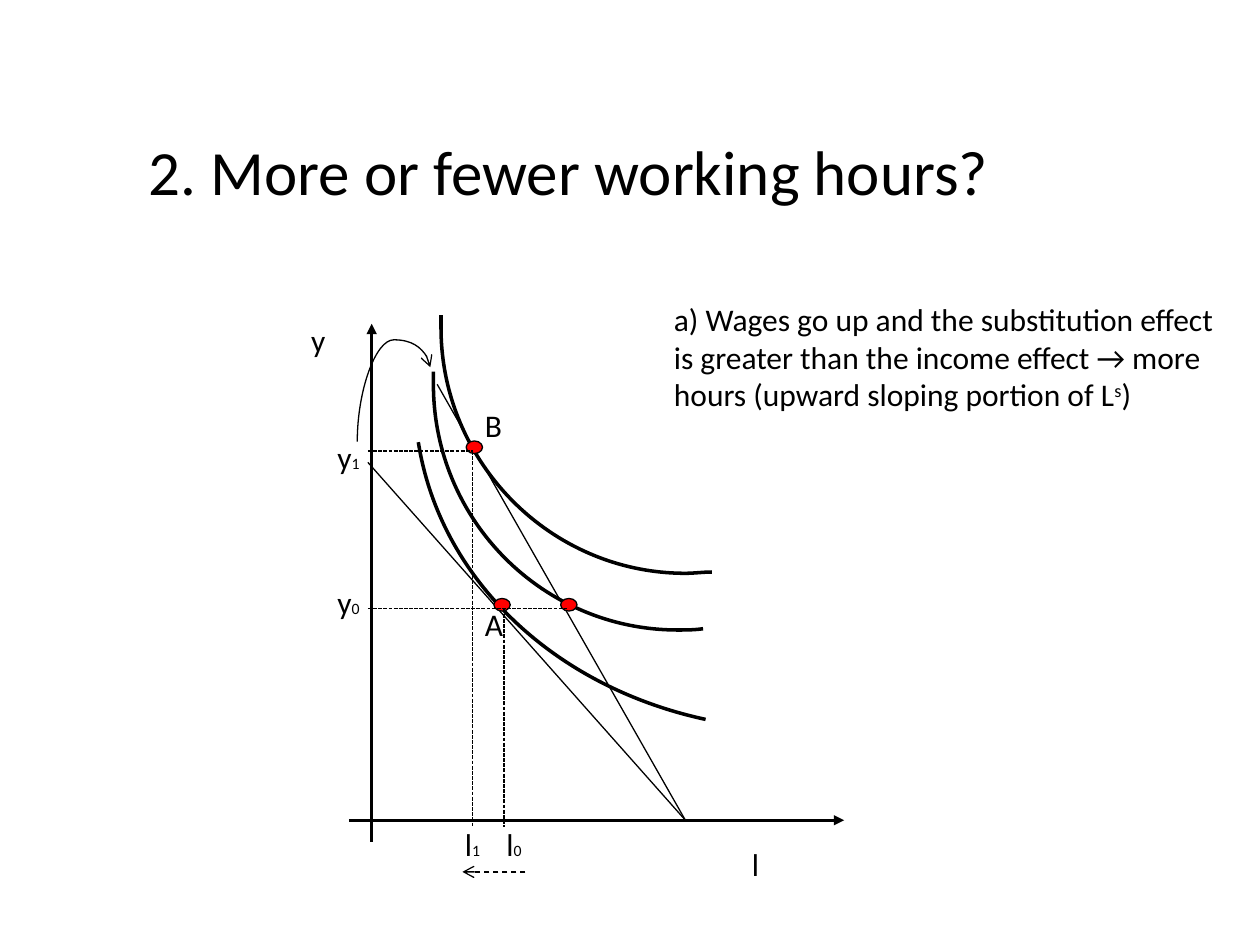
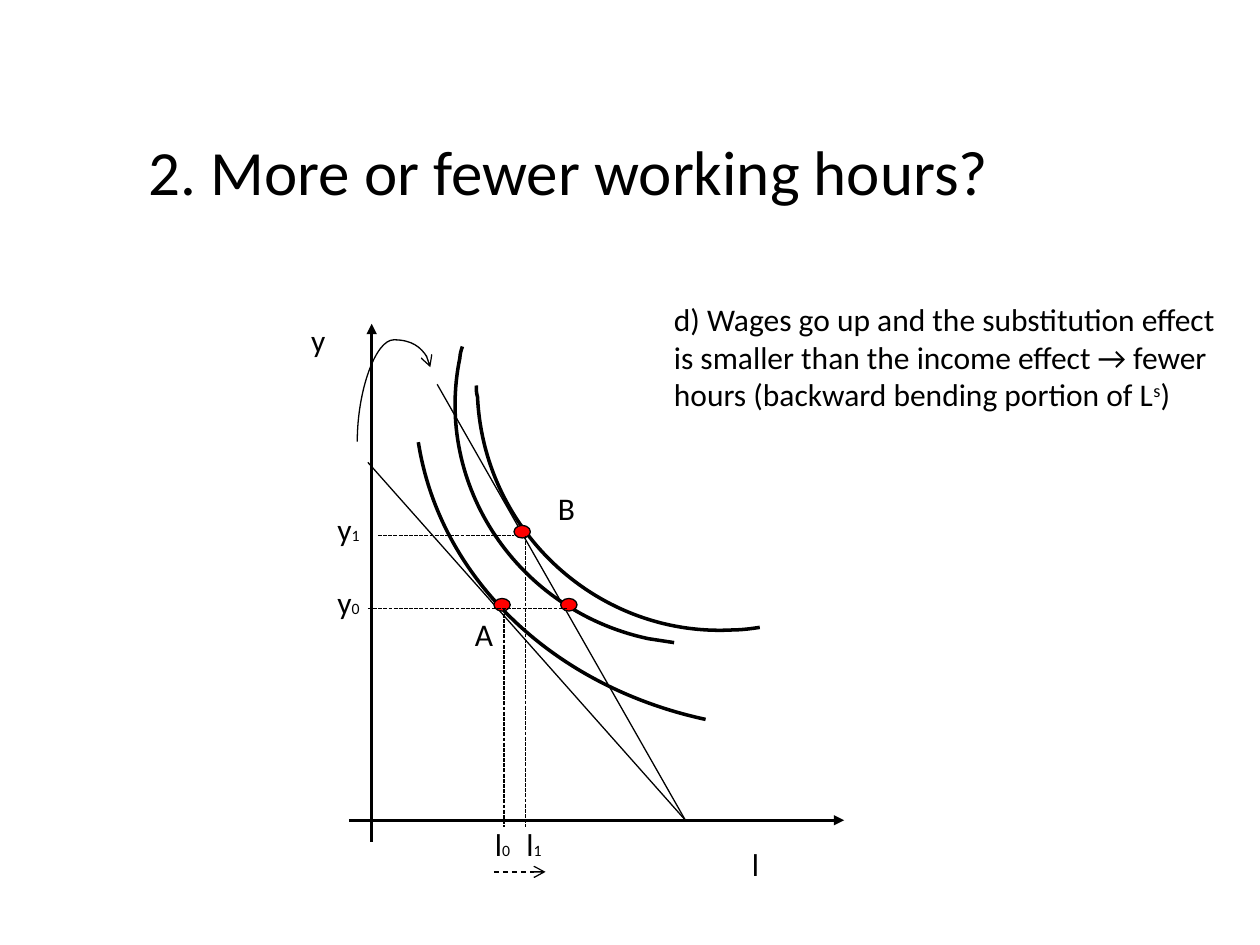
"""Build two slides on how a wage rise moves the choice of working hours."""
from lxml import etree
from pptx import Presentation
from pptx.dml.color import RGBColor
from pptx.enum import dml, shapes, text
from pptx.oxml import ns
from pptx.util import Inches, Pt

HUES = {"ink": "000000", "dot": "FF0000"}
FONT = "Calibri"
TITLE = "2. More or fewer working hours?"
DASH = dml.MSO_LINE

AXES = [(2.95, 6.68, 2.95, 2.57), (2.77, 6.51, 6.7, 6.51)]
BUDGETS = [(2.92, 3.67, 5.44, 6.51), (3.47, 3.05, 5.44, 6.51)]
LOW = [(5.6, 5.71), (4.39, 5.45), (3.49, 4.59), (3.32, 3.51)]
DOTS = [(3.92, 4.75), (4.45, 4.75)]
GUIDES = [(2.92, 4.83, 4.5, 4.83), (4, 4.83, 4, 6.56)]
LABELS = [("y", "", 2.37, 2.5, 0.32), ("l", "", 5.87, 6.66, 0.26),
          ("y", "0", 2.58, 4.58, 0.38)]

SLIDES = [
    {
        "note": "a) Wages go up and the substitution effect is greater than the "
                "income effect → more hours (upward sloping portion of L",
        "curves": [
            [(5.65, 4.54), (5.58, 4.54), (5.51, 4.55), (5.44, 4.55), (4.37, 4.55),
             (3.5, 3.67), (3.5, 2.6), (3.5, 2.56), (3.5, 2.53), (3.5, 2.5)],
            [(5.58, 4.99), (5.51, 5), (5.44, 5), (5.38, 5), (4.31, 5),
             (3.44, 4.13), (3.44, 3.05), (3.44, 3.02), (3.44, 2.99), (3.44, 2.95)],
        ],
        "dot": (3.7, 3.5),
        "guides": [(3.75, 3.58, 3.75, 6.56), (2.92, 3.58, 3.75, 3.58)],
        "shift": (4.17, 6.92, 3.67, 6.92),
        "labels": [("l", "0", 3.92, 6.5, 0.32), ("l", "1", 3.59, 6.5, 0.32),
                   ("y", "1", 2.58, 3.43, 0.38), ("A", "", 3.75, 4.75, 0.33),
                   ("B", "", 3.75, 3.17, 0.33)],
    },
    {
        "note": "d) Wages go up and the substitution effect is smaller than the "
                "income effect → fewer hours (backward bending portion of L",
        "curves": [
            [(6.03, 4.98), (5.96, 4.99), (5.89, 5), (5.82, 5), (4.76, 5.06),
             (3.84, 4.23), (3.79, 3.15), (3.78, 3.12), (3.78, 3.09), (3.78, 3.06)],
            [(5.35, 5.1), (5.28, 5.09), (5.22, 5.08), (5.15, 5.07), (4.11, 4.85),
             (3.44, 3.85), (3.65, 2.84), (3.65, 2.81), (3.66, 2.78), (3.67, 2.75)],
        ],
        "dot": (4.08, 4.17),
        "guides": [(4.17, 4.25, 4.17, 6.56), (3, 4.25, 4.08, 4.25)],
        "shift": (3.92, 6.92, 4.33, 6.92),
        "labels": [("l", "0", 3.83, 6.5, 0.32), ("l", "1", 4.08, 6.5, 0.32),
                   ("y", "1", 2.58, 4, 0.38), ("A", "", 3.67, 4.83, 0.33),
                   ("B", "", 4.33, 3.83, 0.33)],
    },
]


def hue(name):
    return RGBColor.from_string(HUES[name])


def add(node, tag, **attrs):
    return etree.SubElement(node, ns.qn(tag), attrs)


def ink(line, width):
    line.color.rgb = hue("ink")
    line.width = Pt(width)


def link(slide, ends, width=0.75, dash=None, head=None,
         kind=shapes.MSO_CONNECTOR.STRAIGHT):
    con = slide.shapes.add_connector(kind, *map(Inches, ends))
    ink(con.line, width)
    if dash:
        con.line.dash_style = dash
    props = con._element.spPr
    if head:
        add(props.find(ns.qn("a:ln")), "a:tailEnd", type=head)
    add(props, "a:effectLst")
    return con


def swing(slide):
    con = link(slide, (3.42, 3.5, 2.83, 2.92), head="arrow",
               kind=shapes.MSO_CONNECTOR.CURVE)
    props = con._element.spPr
    props.find(ns.qn("a:xfrm")).set("rot", "5400000")
    guide = props.find(ns.qn("a:prstGeom")).find(ns.qn("a:avLst"))
    add(guide, "a:gd", name="adj1", fmla="val 136900")


def curve(slide, points):
    spots = [(Inches(x), Inches(y)) for x, y in points]
    pen = slide.shapes.build_freeform(*spots[0])
    pen.add_line_segments(spots[1:], close=False)
    shape = pen.convert_to_shape()
    shape.shadow.inherit = False
    shape.fill.background()
    ink(shape.line, 2)
    steps = list(shape._element.iter(ns.qn("a:lnTo")))
    for i in range(0, len(steps), 3):
        bend = etree.Element(ns.qn("a:cubicBezTo"))
        steps[i].addprevious(bend)
        for step in steps[i:i + 3]:
            bend.append(step[0])
            step.getparent().remove(step)


def dot(slide, x, y):
    shape = slide.shapes.add_shape(shapes.MSO_SHAPE.OVAL, Inches(x), Inches(y),
                                   Inches(0.13), Inches(0.1))
    shape.shadow.inherit = False
    shape.fill.solid()
    shape.fill.fore_color.rgb = hue("dot")
    ink(shape.line, 0.75)


def style(para, size):
    para.font.name = FONT
    para.font.size = Pt(size)
    para.font.color.rgb = hue("ink")


def write(slide, box, parts, wrap=False):
    frame = slide.shapes.add_textbox(*map(Inches, box)).text_frame
    frame.word_wrap = wrap
    frame.auto_size = text.MSO_AUTO_SIZE.SHAPE_TO_FIT_TEXT
    para = frame.paragraphs[0]
    style(para, 18)
    for part in parts:
        para.add_run().text = part
    return para.runs


def head(slide):
    title = slide.shapes.title
    title.left, title.top, title.width, title.height = map(
        Inches, (1.08, 1, 6.93, 0.71))
    frame = title.text_frame
    frame.text = TITLE
    frame.word_wrap = False
    frame.auto_size = text.MSO_AUTO_SIZE.NONE
    frame.vertical_anchor = text.MSO_ANCHOR.TOP
    para = frame.paragraphs[0]
    para.alignment = text.PP_ALIGN.LEFT
    style(para, 36)


def draw(slide, data):
    head(slide)
    for ends in AXES:
        link(slide, ends, 1.75, head="triangle")
    for ends in BUDGETS:
        link(slide, ends)
    for points in [LOW] + data["curves"]:
        curve(slide, points)
    for spot in DOTS + [data["dot"]]:
        dot(slide, *spot)
    for ends in GUIDES + data["guides"]:
        link(slide, ends, dash=DASH.SQUARE_DOT)
    link(slide, data["shift"], dash=DASH.DASH, head="arrow")
    swing(slide)
    runs = write(slide, (5.25, 2.33, 4.58, 1.01), (data["note"], "s", ")"), True)
    runs[1].font._element.set("baseline", "30000")
    for name, sub, x, y, wide in LABELS + data["labels"]:
        runs = write(slide, (x, y, wide, 0.4), (name, sub) if sub else (name,))
        if sub:
            runs[1].font.size = Pt(9)


def main():
    deck = Presentation()
    deck.slide_width, deck.slide_height = Inches(10), Inches(7.5)
    for data in SLIDES:
        draw(deck.slides.add_slide(deck.slide_layouts[5]), data)
    deck.save("out.pptx")


if __name__ == "__main__":
    main()
